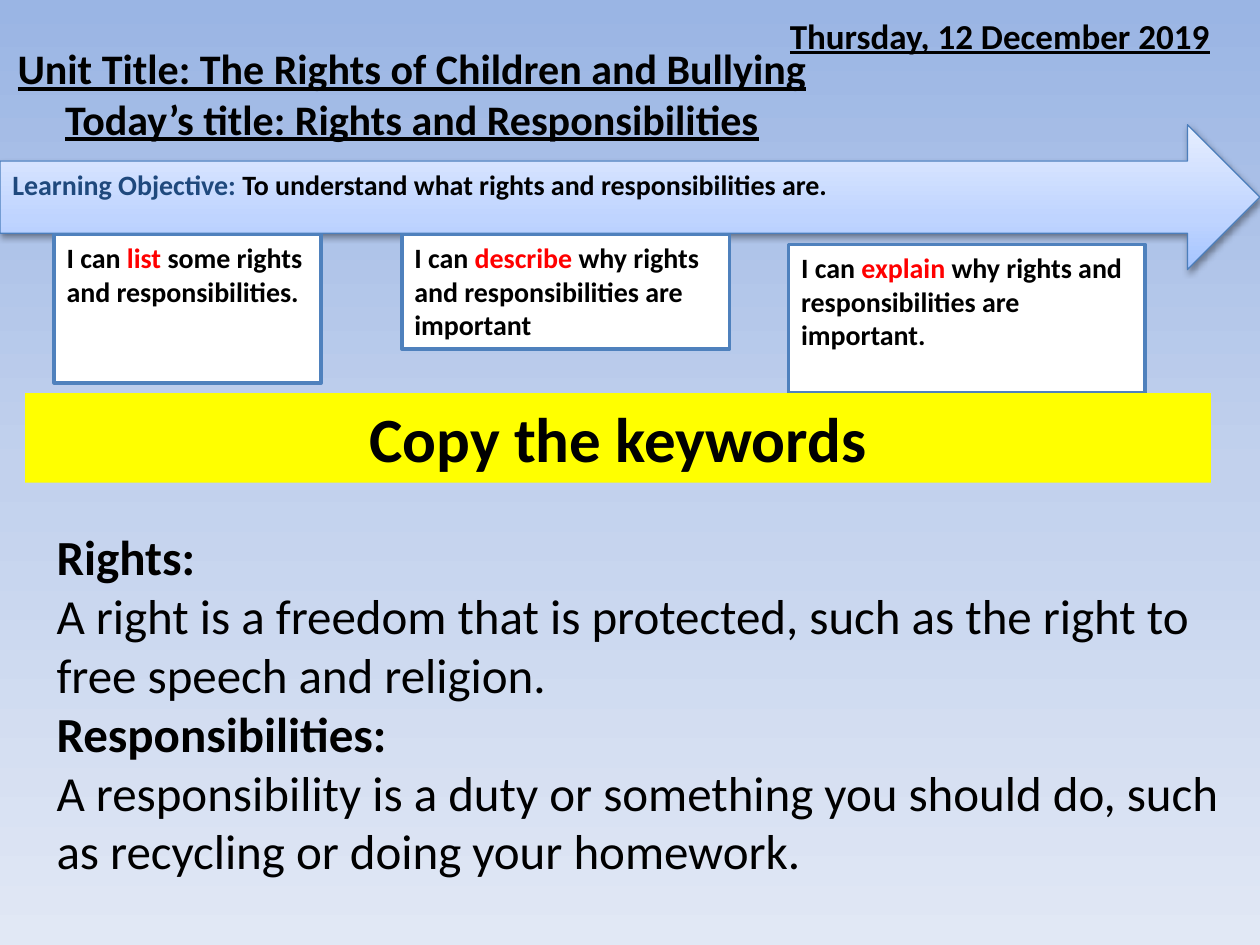
"""Build a lesson slide on rights and responsibilities."""
from lxml.etree import SubElement
from pptx import Presentation
from pptx.dml.color import RGBColor
from pptx.enum.shapes import MSO_SHAPE
from pptx.enum.text import MSO_ANCHOR, PP_ALIGN
from pptx.oxml.ns import qn
from pptx.util import Inches, Pt

THEME = {
    "font": "Calibri", "ink": "000000", "navy": "1F497D", "red": "FF0000",
    "white": "FFFFFF", "blue": "4F81BD", "edge": "4B7EBC", "yellow": "FFFF00",
    "sky": [(0, "9AB5E4"), (50, "C2D1ED"), (100, "E1E8F5")],
    "ice": [(0, "A4C4FF"), (35, "BFD4FF"), (100, "E6EEFF")],
    "small": 16, "date": 20, "title": 24, "body": 28, "banner": 36,
}
WIDE, HIGH = Inches(10), Inches(7.5)

GOAL = [("Learning Objective: ", "navy"),
        ("To understand what rights and responsibilities are.", "ink")]
STEPS = [
    ((4.3, 24.8, 21.2, 15.73), "I can", " list ",
     "some rights and responsibilities."),
    ((31.9, 24.8, 26, 12.13), "I can ", "describe",
     " why rights and responsibilities are important"),
    ((62.6, 25.87, 28.3, 15.73), "I can ", "explain ",
     "why rights and responsibilities are important."),
]
DATE = "Thursday, 12 December 2019"
TITLES = ["Unit Title: The Rights of Children and Bullying",
          "Today’s title: Rights and Responsibilities"]
BANNER = "Copy the keywords"
TERMS = [
    ("Rights:", "A right is a freedom that is protected, "
     "such as the right to free speech and religion."),
    ("Responsibilities:", "A responsibility is a duty or something you "
     "should do, such as recycling or doing your homework."),
]


def color(name):
    return RGBColor.from_string(THEME[name])


def area(box):
    return [int(side * part / 100)
            for side, part in zip((WIDE, HIGH, WIDE, HIGH), box)]


def blend(fill, root, stops, angle):
    fill.gradient()
    fill.gradient_angle = angle
    group = next(root.iter(qn("a:gsLst")))
    for stop in list(group):
        group.remove(stop)
    for spot, shade in stops:
        stop = SubElement(group, qn("a:gs"), pos=str(spot * 1000))
        SubElement(stop, qn("a:srgbClr"), val=shade)


def cast(shape):
    glow = SubElement(next(shape.element.iter(qn("a:effectLst"))),
                      qn("a:outerShdw"), blurRad=str(Pt(3.1)),
                      dist=str(Pt(1.6)), dir="5400000", rotWithShape="0")
    shade = SubElement(glow, qn("a:srgbClr"), val=THEME["ink"])
    SubElement(shade, qn("a:alpha"), val="38000")


def block(slide, box, kind=MSO_SHAPE.RECTANGLE, fill=None, line=None, width=2):
    shape = slide.shapes.add_shape(kind, *area(box))
    shape.shadow.inherit = False
    if fill:
        shape.fill.solid()
        shape.fill.fore_color.rgb = color(fill)
    if line:
        shape.line.color.rgb = color(line)
        shape.line.width = Pt(width)
    else:
        shape.line.fill.background()
    return shape


def write(shape, lines, size, align=PP_ALIGN.LEFT, anchor=MSO_ANCHOR.TOP,
          under=None):
    frame = shape.text_frame
    frame.word_wrap = True
    frame.vertical_anchor = anchor
    for row, (runs, bold) in enumerate(lines):
        para = frame.add_paragraph() if row else frame.paragraphs[0]
        para.alignment = align
        font = para.font
        font.name, font.size = THEME["font"], Pt(THEME[size])
        font.bold, font.underline = bold, under
        for text, tint in runs:
            run = para.add_run()
            run.text = text
            run.font.color.rgb = color(tint)


def label(slide, box, lines, size, **style):
    shape = slide.shapes.add_textbox(*area(box))
    write(shape, lines, size, **style)
    return shape


def main():
    deck = Presentation()
    deck.slide_width, deck.slide_height = WIDE, HIGH
    slide = deck.slides.add_slide(deck.slide_layouts[6])
    blend(slide.background.fill, slide.element, THEME["sky"], 270)

    arrow = block(slide, (0, 13.2, 100, 15.33), MSO_SHAPE.RIGHT_ARROW,
                  line="edge", width=0.75)
    blend(arrow.fill, arrow.element, THEME["ice"], 90)
    cast(arrow)
    write(arrow, [(GOAL, True)], "small")

    for box, start, verb, rest in STEPS:
        card = block(slide, box, fill="white", line="blue")
        runs = [(start, "ink"), (verb, "red"), (rest, "ink")]
        write(card, [(runs, True)], "small")

    label(slide, (61.7, 0, 38.3, 7.47), [([(DATE, "ink")], True)], "date",
          anchor=MSO_ANCHOR.MIDDLE, under=True)
    label(slide, (0, 3.87, 65.4, 12.13),
          [([(text, "ink")], True) for text in TITLES], "title",
          align=PP_ALIGN.CENTER, under=True)

    strip = block(slide, (2, 41.6, 94.1, 9.47), fill="yellow")
    write(strip, [([(BANNER, "ink")], True)], "banner", PP_ALIGN.CENTER)

    lines = [([(text, "ink")], bold) for term in TERMS
             for text, bold in zip(term, (True, False))]
    notes = label(slide, (3.5, 51.07, 96.5, 43.07), lines, "body")
    notes.text_frame.margin_top = Inches(0.35)
    deck.save("out.pptx")


if __name__ == "__main__":
    main()
